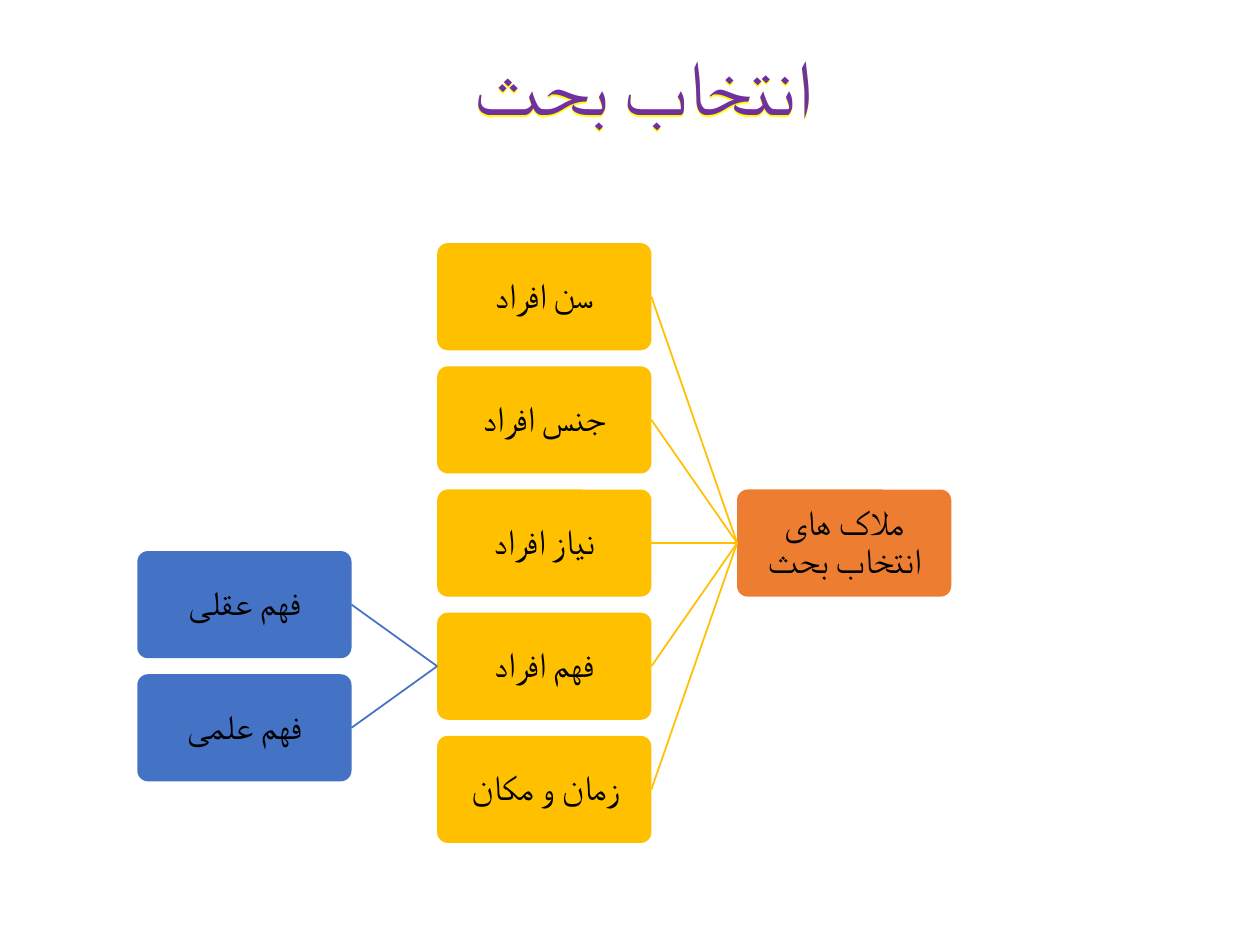
from lxml.etree import SubElement
from pptx import Presentation
from pptx.dml.color import RGBColor
from pptx.enum.shapes import MSO_CONNECTOR, MSO_SHAPE
from pptx.enum.text import MSO_ANCHOR, PP_ALIGN
from pptx.oxml.ns import qn
from pptx.util import Inches, Pt

PURPLE = RGBColor(0x70, 0x30, 0xA0)
YELLOW = RGBColor(0xFF, 0xFF, 0x00)
BLACK = RGBColor(0x00, 0x00, 0x00)
ORANGE = RGBColor(0xED, 0x7D, 0x31)
GOLD = RGBColor(0xFF, 0xC0, 0x00)
BLUE = RGBColor(0x44, 0x72, 0xC4)

# Grid of the tree: gaps are shares of the box size
BOX_WIDTH, BOX_HEIGHT = Inches(1.7), Inches(0.85)
COLUMN_STEP, ROW_STEP = BOX_WIDTH * 1.4, BOX_HEIGHT * 1.15
TREE_LEFT, TREE_TOP = Inches(1.09), Inches(1.93)

# name: (text, column, row, fill, parent)
NODES = {
    "criteria": ("ملاک های انتخاب بحث", 2, 2, ORANGE, None),
    "age": ("سن افراد", 1, 0, GOLD, "criteria"),
    "gender": ("جنس افراد", 1, 1, GOLD, "criteria"),
    "need": ("نیاز افراد", 1, 2, GOLD, "criteria"),
    "understanding": ("فهم افراد", 1, 3, GOLD, "criteria"),
    "rational": ("فهم عقلی", 0, 2.5, BLUE, "understanding"),
    "scientific": ("فهم علمی", 0, 3.5, BLUE, "understanding"),
    "time_place": ("زمان و مکان", 1, 4, GOLD, "criteria"),
}


def write_text(box, text, size, color, margin):
    """Fill the box with one centred right-to-left paragraph."""
    frame = box.text_frame
    frame_format = {"word_wrap": True, "vertical_anchor": MSO_ANCHOR.MIDDLE}
    for side in ("left", "right", "top", "bottom"):
        frame_format[f"margin_{side}"] = margin
    for name, value in frame_format.items():
        setattr(frame, name, value)
    para = frame.paragraphs[0]
    para.alignment = PP_ALIGN.CENTER
    para.line_spacing = 0.9
    para._p.get_or_add_pPr().set("rtl", "1")
    span = para.add_run()
    span.text = text
    for name, value in {"size": Pt(size), "name": "Calibri"}.items():
        setattr(span.font, name, value)
    span.font.color.rgb = color
    complex_font = SubElement(span._r.get_or_add_rPr(), qn("a:cs"))
    complex_font.set("typeface", "Calibri")


deck = Presentation()
deck.slide_width, deck.slide_height = Inches(10), Inches(7.5)
page = deck.slides.add_slide(deck.slide_layouts[6])

# Title with a yellow shadow under its letters
title = page.shapes.add_textbox(Inches(0.79), Inches(-0.01), Inches(8.62), Inches(1.45))
write_text(title, "انتخاب بحث", 44, PURPLE, Inches(0.05))
effects = SubElement(title._element.spPr, qn("a:effectLst"))
shadow = SubElement(effects, qn("a:outerShdw"))
for name, value in {"dist": Pt(1.5), "dir": 5400000, "algn": "t", "rotWithShape": 0}.items():
    shadow.set(name, str(value))
SubElement(shadow, qn("a:srgbClr")).set("val", str(YELLOW))

# Boxes of the tree, each joined to its parent on the right
boxes = {}
for node, (text, column, row, fill, parent) in NODES.items():
    box = page.shapes.add_shape(
        MSO_SHAPE.ROUNDED_RECTANGLE,
        int(TREE_LEFT + column * COLUMN_STEP),
        int(TREE_TOP + row * ROW_STEP),
        BOX_WIDTH,
        BOX_HEIGHT,
    )
    box.adjustments[0] = 0.1
    box.shadow.inherit = False
    box.fill.solid()
    box.fill.fore_color.rgb = fill
    box.line.fill.background()
    write_text(box, text, 20, BLACK, Inches(0.03))
    boxes[node] = box
    if parent:
        branch = page.shapes.add_connector(MSO_CONNECTOR.STRAIGHT, 0, 0, 0, 0)
        branch.begin_connect(boxes[parent], 1)
        branch.end_connect(box, 3)
        branch.line.color.rgb = fill
        branch.line.width = Pt(1)
        SubElement(branch._element.spPr, qn("a:effectLst"))

deck.save("out.pptx")
